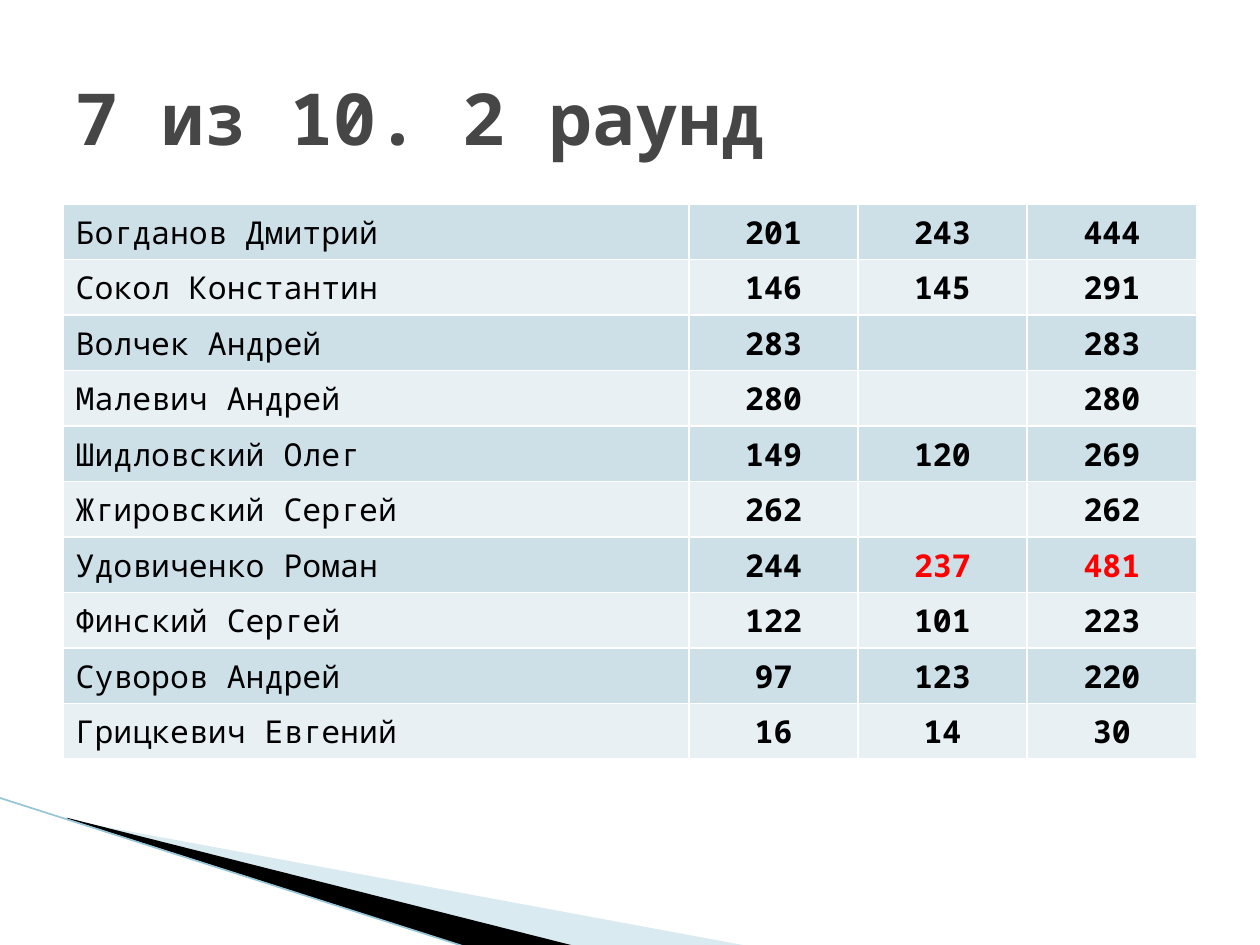
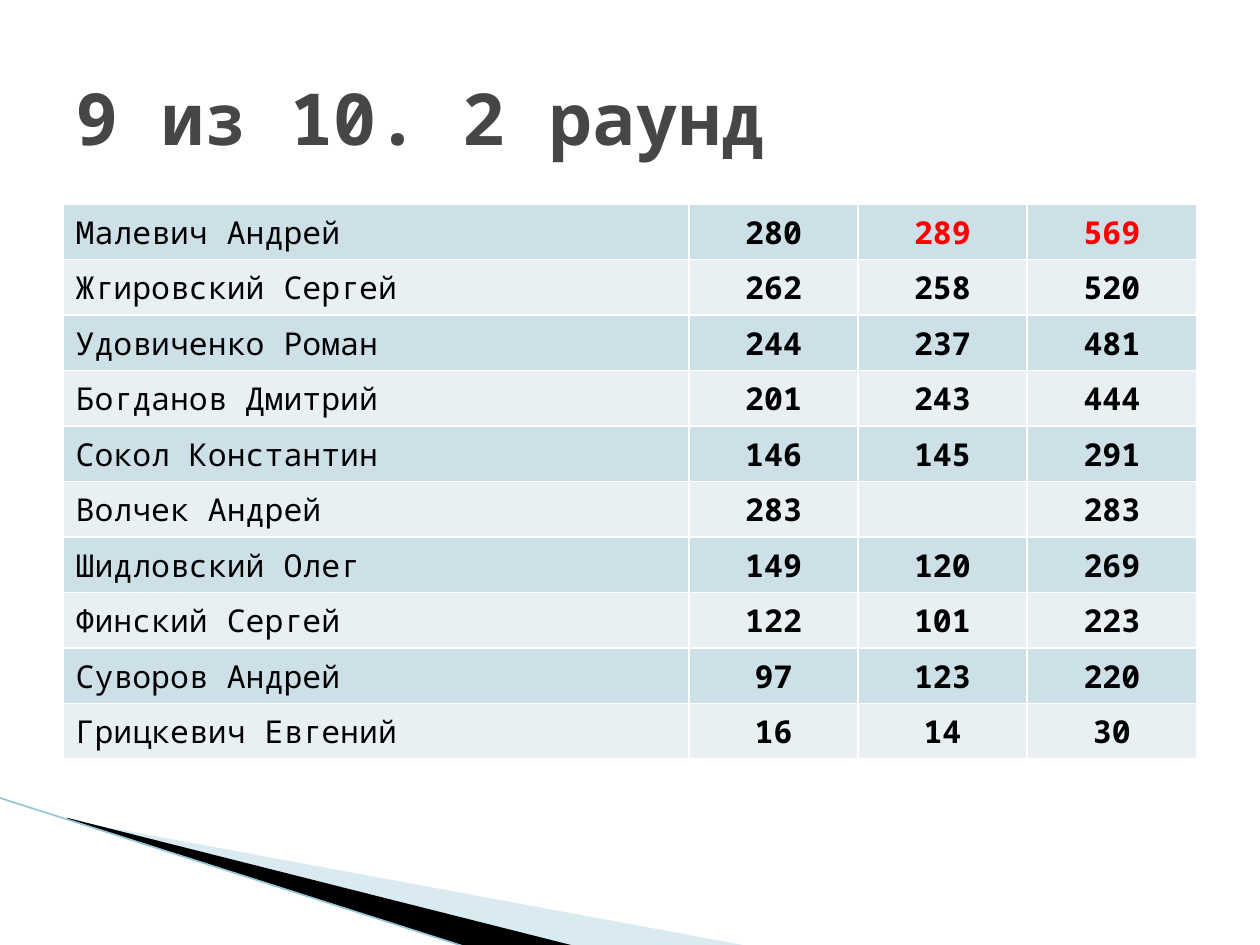
from lxml.etree import SubElement
from pptx import Presentation
from pptx.dml.color import RGBColor
from pptx.enum.shapes import MSO_CONNECTOR
from pptx.enum.text import MSO_ANCHOR, MSO_AUTO_SIZE, PP_ALIGN
from pptx.oxml.ns import qn
from pptx.util import Inches, Pt

COLORS = {
    "title": "464646", "text": "000000", "leader": "FF0000",
    "band_dark": "CDE0E8", "band_light": "E8F0F4", "border": "FFFFFF",
    "wedge_light": "A0CBDC", "wedge_dark": "000000", "edge": "97C5D8",
}
FONT = "Noto Sans Mono"
COL_WIDTHS = [4.97, 1.34, 1.34, 1.35]
ROW_HEIGHT = 0.41

# Scores of round 1 and round 2; None means not played yet
ROUND_7 = [
    ("Богданов Дмитрий", 201, 243),
    ("Сокол Константин", 146, 145),
    ("Волчек Андрей", 283, None),
    ("Малевич Андрей", 280, None),
    ("Шидловский Олег", 149, 120),
    ("Жгировский Сергей", 262, None),
    ("Удовиченко Роман", 244, 237),
    ("Финский Сергей", 122, 101),
    ("Суворов Андрей", 97, 123),
    ("Грицкевич Евгений", 16, 14),
]
ROUND_9 = [
    ("Малевич Андрей", 280, 289),
    ("Жгировский Сергей", 262, 258),
    ("Удовиченко Роман", 244, 237),
    ("Богданов Дмитрий", 201, 243),
    ("Сокол Константин", 146, 145),
    ("Волчек Андрей", 283, None),
    ("Шидловский Олег", 149, 120),
    ("Финский Сергей", 122, 101),
    ("Суворов Андрей", 97, 123),
    ("Грицкевич Евгений", 16, 14),
]


def rgb(name):
    return RGBColor.from_string(COLORS[name])


class Deck:
    def __init__(self):
        self.prs = Presentation()
        self.prs.slide_width, self.prs.slide_height = Inches(10), Inches(7.5)
        self.s = None

    def slide(self, title):
        self.s = self.prs.slides.add_slide(self.prs.slide_layouts[5])
        self.corner()
        self.title(title)

    def run(self, p, text, size, color, bold=False):
        r = p.add_run()
        r.text = text
        r.font.name, r.font.size, r.font.bold = FONT, Pt(size), bold
        r.font.color.rgb = rgb(color)

    def title(self, text):
        sp = self.s.shapes.title
        sp.left, sp.top = Inches(0.5), Inches(0.3)
        sp.width, sp.height = Inches(9), Inches(1.25)
        tf = sp.text_frame
        tf.word_wrap = True
        tf.auto_size = MSO_AUTO_SIZE.NONE
        tf.vertical_anchor = MSO_ANCHOR.MIDDLE
        p = tf.paragraphs[0]
        p.alignment = PP_ALIGN.LEFT
        self.run(p, text, 41, "title", bold=True)

    def wedge(self, points, color, opacity=None):
        start, *rest = [(Inches(x), Inches(y)) for x, y in points]
        fb = self.s.shapes.build_freeform(*start)
        fb.add_line_segments(rest, close=True)
        sp = fb.convert_to_shape()
        sp.shadow.inherit = False
        sp.fill.solid()
        sp.fill.fore_color.rgb = rgb(color)
        sp.line.fill.background()
        if opacity:
            clr = sp.fill._xPr.find(".//" + qn("a:srgbClr"))
            SubElement(clr, qn("a:alpha"), val=str(opacity * 1000))

    def line(self, start, end, color, width):
        ends = [Inches(v) for v in (*start, *end)]
        cn = self.s.shapes.add_connector(MSO_CONNECTOR.STRAIGHT, *ends)
        cn.line.color.rgb = rgb(color)
        cn.line.width = Pt(width)
        SubElement(cn._element.spPr, qn("a:effectLst"))

    def corner(self):
        self.wedge([(0.55, 6.51), (5.95, 7.51), (4.56, 7.51), (0.55, 6.5)],
                   "wedge_light", opacity=40)
        self.wedge([(0.53, 6.49), (4.57, 7.51), (3.72, 7.52), (0.54, 6.5)],
                   "wedge_dark")
        self.line((-0.01, 6.33), (3.71, 7.52), "edge", 0.95)

    def cell(self, cell, text, band, color, is_score):
        tcPr = cell._tc.get_or_add_tcPr()
        for side in ("a:lnL", "a:lnR", "a:lnT", "a:lnB"):
            ln = SubElement(tcPr, qn(side), w=str(Pt(1)))
            fill = SubElement(ln, qn("a:solidFill"))
            SubElement(fill, qn("a:srgbClr"), val=COLORS["border"])
        cell.fill.solid()
        cell.fill.fore_color.rgb = rgb(band)
        p = cell.text_frame.paragraphs[0]
        p.alignment = PP_ALIGN.CENTER if is_score else PP_ALIGN.LEFT
        if text:
            self.run(p, text, 18, color, bold=is_score)

    def scores(self, players, leader):
        """Adds the totals and marks the leader's last two columns."""
        table = self.s.shapes.add_table(
            len(players), len(COL_WIDTHS), Inches(0.5), Inches(1.62),
            Inches(sum(COL_WIDTHS)), Inches(ROW_HEIGHT * len(players))).table
        table.first_row = table.horz_banding = False
        for col, width in zip(table.columns, COL_WIDTHS):
            col.width = Inches(width)
        for i, (name, first, second) in enumerate(players):
            table.rows[i].height = Inches(ROW_HEIGHT)
            band = "band_light" if i % 2 else "band_dark"
            values = [name, first, second, first + (second or 0)]
            for j, value in enumerate(values):
                color = "leader" if name == leader and j > 1 else "text"
                text = "" if value is None else str(value)
                self.cell(table.cell(i, j), text, band, color, j > 0)


def main():
    deck = Deck()

    # Standings after player 7
    deck.slide("7 из 10. 2 раунд")
    deck.scores(ROUND_7, leader="Удовиченко Роман")

    # Standings after player 9
    deck.slide("9 из 10. 2 раунд")
    deck.scores(ROUND_9, leader="Малевич Андрей")

    deck.prs.save("out.pptx")


if __name__ == "__main__":
    main()
